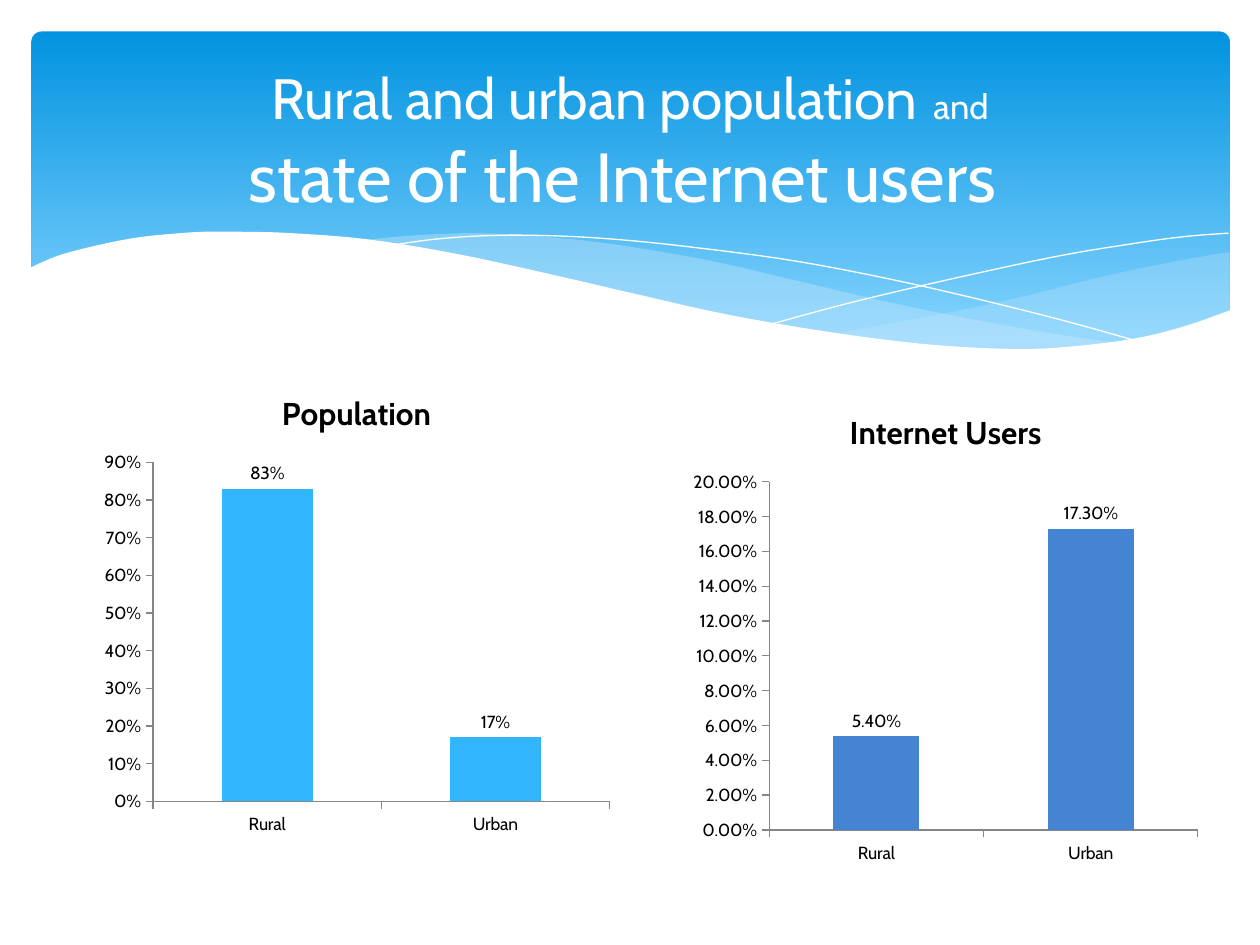
from dataclasses import dataclass

from lxml import etree
from pptx import Presentation
from pptx.chart.data import CategoryChartData
from pptx.dml.color import RGBColor
from pptx.enum.chart import XL_CHART_TYPE, XL_LABEL_POSITION, XL_TICK_MARK
from pptx.enum.shapes import MSO_SHAPE
from pptx.enum.text import MSO_ANCHOR, PP_ALIGN
from pptx.oxml.ns import qn
from pptx.util import Inches, Pt

COLUMN = XL_CHART_TYPE.COLUMN_CLUSTERED
LABEL_TOP = XL_LABEL_POSITION.OUTSIDE_END
TICK_OUT, TICK_NONE = XL_TICK_MARK.OUTSIDE, XL_TICK_MARK.NONE
ROUND = MSO_SHAPE.ROUNDED_RECTANGLE
MIDDLE, CENTER = MSO_ANCHOR.MIDDLE, PP_ALIGN.CENTER
WIDE, HIGH = Inches(10), Inches(7.5)
COLS, ROWS = 100, 75


@dataclass(frozen=True)
class Theme:
    font: str = "Cabin"
    white: str = "FFFFFF"
    black: str = "000000"
    axis: str = "868686"
    top: str = "0293E0"
    base: str = "83D3FE"
    wave: str = "C6E7FC"
    rural: str = "31B6FD"
    users: str = "4584D3"
    big: float = 39.6
    mid: float = 32.4
    small: float = 19.8
    head: float = 18
    label: float = 10


THEME = Theme()

# Key points of the waves, in grid columns and rows
RIGHT_TOP = [(97.6, 20), (93.5, 20.7), (89.1, 21.6), (86.1, 22.3), (80.5, 23.7),
             (75.3, 24.8), (70.6, 25.7), (66.1, 26.5)]
RIGHT_LOW = [(66.1, 26.5), (70.5, 27.1), (75.7, 27.6), (80.3, 27.8), (85.4, 27.6),
             (89.7, 27), (93.5, 26.2), (97.6, 24.7)]
MID_TOP = [(89.3, 27.3), (83.7, 26.5), (77.5, 25.4), (70.6, 24), (62.9, 22.2),
           (56.9, 20.8), (51.4, 19.8), (46.5, 19.1), (42, 18.7), (38, 18.5),
           (34.4, 18.6), (31.3, 18.8), (28.6, 19.1)]
MID_LOW = [(28.6, 19.1), (34.2, 19.9), (40.4, 21.1), (49.1, 23.2), (56.6, 24.8),
           (63.4, 26.1), (69.5, 27), (74.8, 27.6), (80.7, 27.8), (84.8, 27.7),
           (89.3, 27.3)]
FALL = [(30.9, 19.5), (34.4, 19), (38.7, 18.7), (43.3, 18.7), (48.9, 19),
        (55.6, 19.7), (63.6, 20.8), (72.7, 22.6), (83.1, 25.1), (90.7, 27.2)]
RISE = [(61.3, 25.7), (67.2, 24.1), (74.8, 22.3), (83.6, 20.4), (89.5, 19.4),
        (93.8, 18.8), (97.5, 18.5)]
FRONT = [(97.7, 24.6), (94, 25.9), (89.9, 26.9), (85, 27.5), (80.9, 27.7),
         (74.4, 27.4), (66.8, 26.5), (57.9, 25), (50.3, 23.3), (44.7, 22),
         (36.5, 20.2), (29.2, 19), (23, 18.5), (19.3, 18.4), (16.1, 18.4),
         (13.2, 18.6), (10.6, 18.9), (7.6, 19.5), (4.6, 20.3), (2.3, 21.3)]
FLOOR = [(2.3, 32.9), (97.7, 32.9)]


def rgb(code):
    return RGBColor.from_string(code)


def place(x, y):
    return round(WIDE * x / COLS), round(HIGH * y / ROWS)


def box(x, y, w, h):
    return *place(x, y), *place(w, h)


def curve(keys, steps=5):
    """Smooth a list of points with a Catmull-Rom spline."""
    ends = [keys[0], *keys, keys[-1]]
    out = []
    for a, b, c, d in zip(ends, ends[1:], ends[2:], ends[3:]):
        for i in range(steps):
            t = i / steps
            out.append(tuple(
                q + t * (r - p) / 2 + t**2 * (2 * p - 5 * q + 4 * r - s) / 2
                + t**3 * (3 * q - p - 3 * r + s) / 2
                for p, q, r, s in zip(a, b, c, d)))
    return out + [keys[-1]]


def paint(shape, color, alpha=100):
    shape.fill.solid()
    shape.fill.fore_color.rgb = rgb(color)
    if alpha < 100:
        tint = shape.fill._xPr.find(".//" + qn("a:srgbClr"))
        etree.SubElement(tint, qn("a:alpha"), val=str(alpha * 1000))


def trace(slide, points, close):
    dots = [place(*point) for point in points]
    pen = slide.shapes.build_freeform(*dots[0])
    pen.add_line_segments(dots[1:], close=close)
    shape = pen.convert_to_shape()
    shape.shadow.inherit = False
    return shape


def add_wave(slide, points, color, alpha=100):
    shape = trace(slide, points, True)
    paint(shape, color, alpha)
    shape.line.fill.background()


def add_thread(slide, keys):
    shape = trace(slide, curve(keys), False)
    shape.fill.background()
    shape.line.color.rgb = rgb(THEME.white)
    shape.line.width = Pt(0)


def add_band(slide):
    band = slide.shapes.add_shape(ROUND, *box(2.5, 2.5, 95.1, 27))
    band.adjustments[0] = 0.03
    band.shadow.inherit = False
    band.line.fill.background()
    band.fill.gradient()
    band.fill.gradient_angle = 270
    stops = zip(band.fill.gradient_stops, (0, 0.9), (THEME.top, THEME.base))
    for stop, spot, color in stops:
        stop.position = spot
        stop.color.rgb = rgb(color)


def style(font, size, color, bold=False):
    font.name, font.size, font.bold = THEME.font, Pt(size), bold
    font.color.rgb = rgb(color)


def write(para, text, *, size, color=THEME.white, bold=False):
    run = para.add_run()
    run.text = text
    style(run.font, size, color, bold)


def add_title(slide):
    frame = slide.shapes.add_textbox(*box(5, 3.7, 90, 13.7)).text_frame
    frame.word_wrap = True
    frame.vertical_anchor = MIDDLE
    para = frame.paragraphs[0]
    para.alignment = CENTER
    write(para, "Rural and urban population", size=THEME.mid)
    write(para, " ", size=THEME.big)
    write(para, "and", size=THEME.small)
    para.add_line_break()
    write(para, "state of the Internet users ", size=THEME.big)


def add_bars(slide, area, name, values, color, form, top, step):
    data = CategoryChartData(number_format=form)
    data.categories = ["Rural", "Urban"]
    data.add_series(name, values)
    chart = slide.shapes.add_chart(COLUMN, *box(*area), data).chart
    style(chart.font, THEME.label, THEME.black)
    chart.has_legend = False
    chart.has_title = True
    write(chart.chart_title.text_frame.paragraphs[0], name,
          size=THEME.head, color=THEME.black, bold=True)
    # Axes
    for axis in (chart.category_axis, chart.value_axis):
        axis.has_major_gridlines = False
        axis.major_tick_mark, axis.minor_tick_mark = TICK_OUT, TICK_NONE
        axis.format.line.color.rgb = rgb(THEME.axis)
    scale = chart.value_axis
    scale.minimum_scale, scale.maximum_scale, scale.major_unit = 0, top, step
    # Bars and their labels
    plot = chart.plots[0]
    plot.gap_width = 150
    plot.vary_by_categories = False
    paint(plot.series[0].format, color)
    plot.has_data_labels = True
    plot.data_labels.show_value = True
    plot.data_labels.position = LABEL_TOP
    for ticks in (scale.tick_labels, plot.data_labels):
        ticks.number_format, ticks.number_format_is_linked = form, False


def main():
    deck = Presentation()
    deck.slide_width, deck.slide_height = WIDE, HIGH
    slide = deck.slides.add_slide(deck.slide_layouts[6])
    # Header band with waves
    add_band(slide)
    add_wave(slide, curve(RIGHT_TOP) + curve(RIGHT_LOW), THEME.wave, 29)
    add_wave(slide, curve(MID_TOP) + curve(MID_LOW), THEME.wave, 40)
    add_thread(slide, FALL)
    add_thread(slide, RISE)
    add_wave(slide, curve(FRONT) + FLOOR, THEME.white)
    add_title(slide)
    # Charts
    add_bars(slide, (7.4, 29.3, 41.8, 37.7), "Population", (0.83, 0.17),
             THEME.rural, "0%", 0.9, 0.1)
    add_bars(slide, (54.2, 30.8, 41.7, 38.5), "Internet Users", (0.054, 0.173),
             THEME.users, "0.00%", 0.2, 0.02)
    deck.save("out.pptx")


if __name__ == "__main__":
    main()
